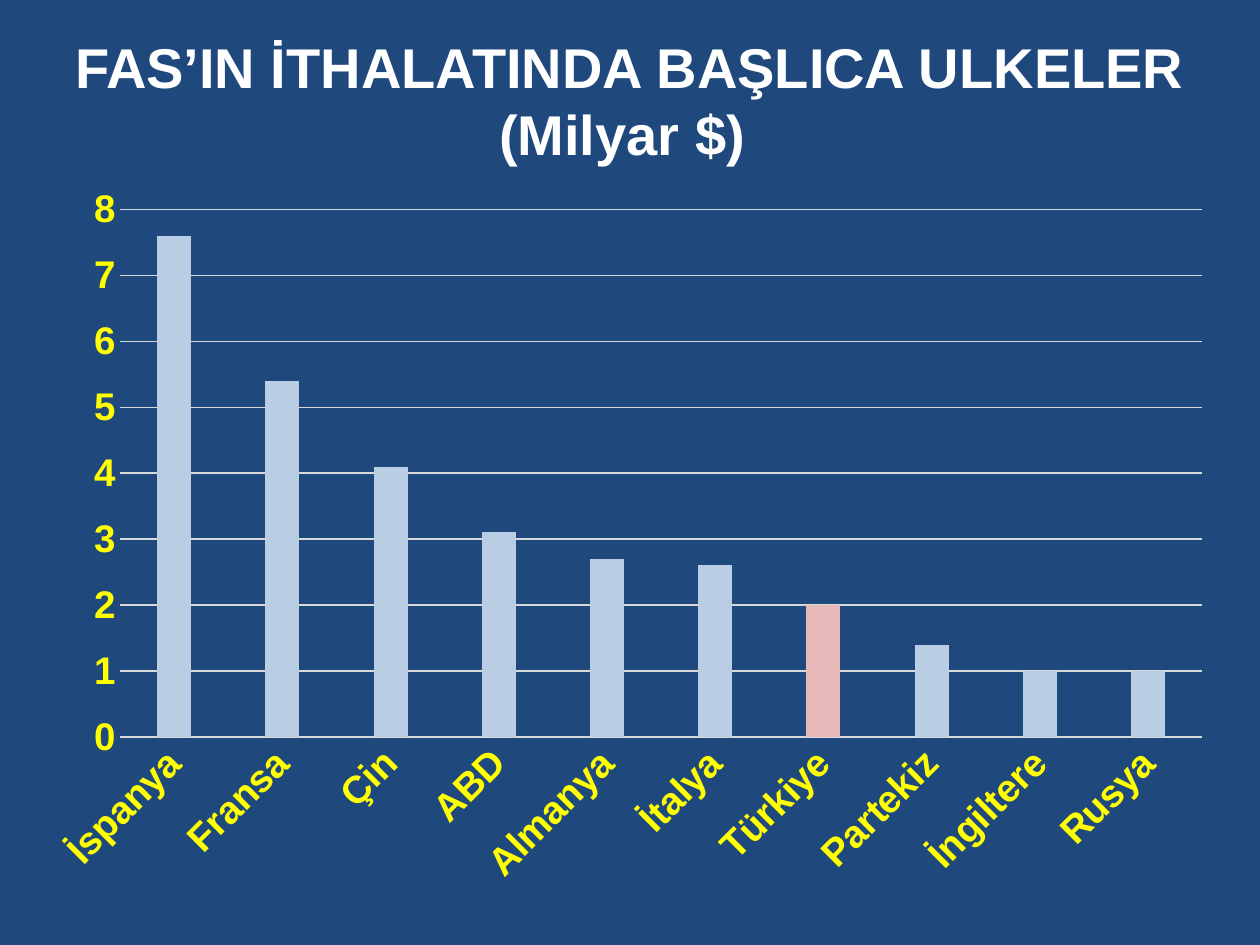
import pptx
import pptx.chart.data
import pptx.dml.color
import pptx.enum.chart
import pptx.enum.text
import pptx.oxml.ns
import pptx.util

TITLE = "FAS’IN İTHALATINDA BAŞLICA ULKELER (Milyar $) "
IMPORTS = [
    ("İspanya", 7.6), ("Fransa", 5.4), ("Çin", 4.1), ("ABD", 3.1),
    ("Almanya", 2.7), ("İtalya", 2.6), ("Türkiye", 2), ("Partekiz", 1.4),
    ("İngiltere", 1), ("Rusya", 1),
]
HIGHLIGHT = "Türkiye"
BACKGROUND, BAR, HIGHLIGHT_BAR = "1F497D", "B9CDE5", "E6B9B8"
GRID, LABEL, WHITE = "D9D9D9", "FFFF00", "FFFFFF"


def rgb(value):
    return pptx.dml.color.RGBColor.from_string(value)


def paint(fill, color):
    fill.solid()
    fill.fore_color.rgb = rgb(color)


def style_font(font, size, color, bold=True):
    font.name = "Arial"
    font.size = pptx.util.Pt(size)
    font.bold = bold
    font.color.rgb = rgb(color)


def style_line(line, color, width=0.75):
    paint(line.fill, color)
    line.width = pptx.util.Pt(width)


def add_text(slide, text, box, size, color, bold=True):
    sp = slide.shapes.add_textbox(*map(pptx.util.Inches, box))
    tf = sp.text_frame
    tf.word_wrap = True
    p = tf.paragraphs[0]
    p.alignment = pptx.enum.text.PP_ALIGN.CENTER
    r = p.add_run()
    r.text = text
    style_font(r.font, size, color, bold)
    return sp


def add_import_chart(slide, box):
    data = pptx.chart.data.CategoryChartData()
    countries, values = zip(*IMPORTS)
    data.categories = countries
    data.add_series("Series 1", values)
    chart = slide.shapes.add_chart(
        pptx.enum.chart.XL_CHART_TYPE.COLUMN_CLUSTERED,
        *map(pptx.util.Inches, box), data).chart
    chart.has_legend = False
    chart.has_title = False
    style_font(chart.font, 10, "000000", bold=False)

    plot = chart.plots[0]
    plot.gap_width, plot.overlap = 219, -27
    plot.vary_by_categories = False
    bars = plot.series[0]
    paint(bars.format.fill, BAR)
    paint(bars.points[countries.index(HIGHLIGHT)].format.fill, HIGHLIGHT_BAR)

    for axis in (chart.category_axis, chart.value_axis):
        axis.major_tick_mark = pptx.enum.chart.XL_TICK_MARK.NONE
        axis.minor_tick_mark = pptx.enum.chart.XL_TICK_MARK.NONE
        style_font(axis.tick_labels.font, 22, LABEL)
    style_line(chart.category_axis.format.line, GRID)
    body = chart.category_axis._element.find(
        pptx.oxml.ns.qn("c:txPr")).find(pptx.oxml.ns.qn("a:bodyPr"))
    body.set("rot", str(-45 * 60000))

    axis = chart.value_axis
    axis.minimum_scale, axis.maximum_scale, axis.major_unit = 0, 8, 1
    axis.format.line.fill.background()
    axis.has_major_gridlines = True
    style_line(axis.major_gridlines.format.line, GRID)


def main():
    prs = pptx.Presentation()
    prs.slide_width = pptx.util.Inches(10)
    prs.slide_height = pptx.util.Inches(7.5)
    slide = prs.slides.add_slide(prs.slide_layouts[6])
    paint(slide.background.fill, BACKGROUND)
    add_text(slide, TITLE, (0, 0.21, 10, 1.18), size=32, color=WHITE)
    add_import_chart(slide, (0.28, 1.38, 9.45, 5.75))
    prs.save("out.pptx")


if __name__ == "__main__":
    main()
